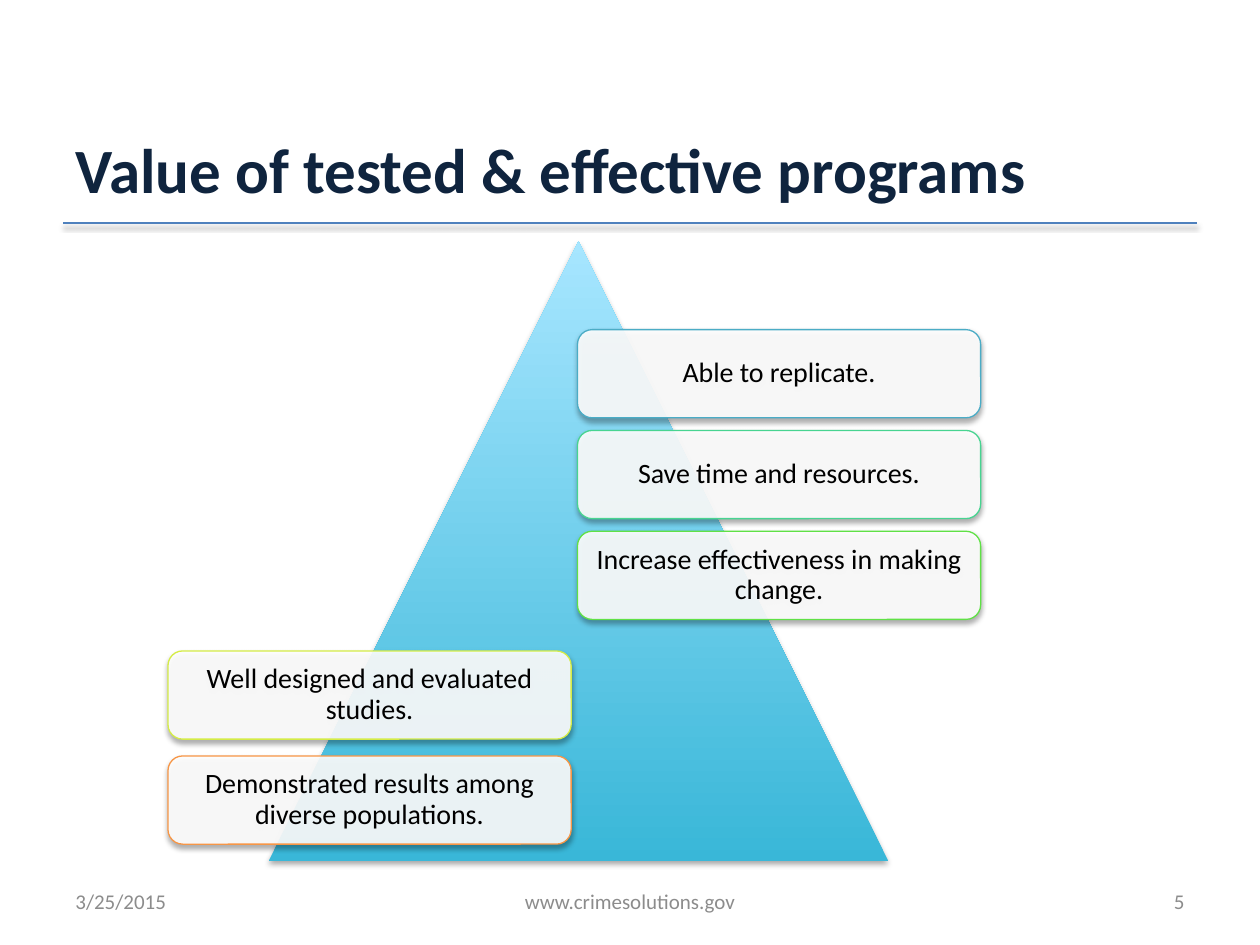
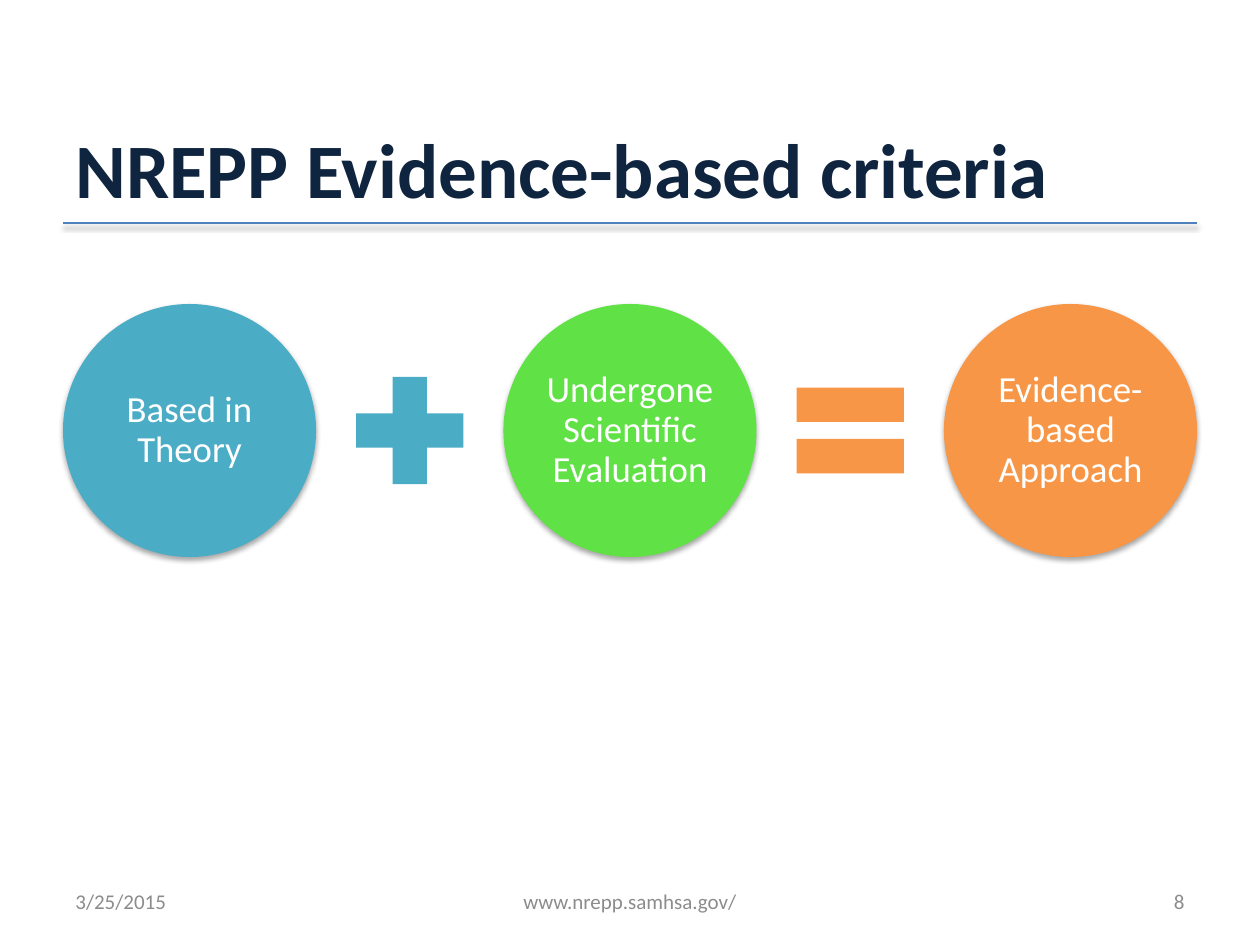
from dataclasses import dataclass

import lxml.etree
import pptx
import pptx.dml.color
import pptx.enum.shapes
import pptx.enum.text
import pptx.oxml.ns
import pptx.util
from pptx.shapes.autoshape import Shape
from pptx.slide import Slide

RGB = pptx.dml.color.RGBColor
SHAPES = pptx.enum.shapes.MSO_SHAPE
ALIGN = pptx.enum.text.PP_ALIGN
qn = pptx.oxml.ns.qn

NAVY = RGB(0x0F, 0x24, 0x3E)
RULE_BLUE = RGB(0x4F, 0x81, 0xBD)
FOOTER_GRAY = RGB(0x8C, 0x8C, 0x8C)
WHITE = RGB(0xFF, 0xFF, 0xFF)
BLACK = RGB(0x00, 0x00, 0x00)
TEAL = RGB(0x4B, 0xAC, 0xC6)
MINT = RGB(0x48, 0xD4, 0x91)
GREEN = RGB(0x60, 0xE1, 0x46)
LIME = RGB(0xD5, 0xEC, 0x46)
ORANGE = RGB(0xF7, 0x96, 0x46)
PYRAMID_BASE = RGB(0x39, 0xB7, 0xD8)
PYRAMID_TIP = RGB(0xA7, 0xE6, 0xFF)

FONT = "Calibri"
SLIDE_WIDTH = pptx.util.Inches(10)
SLIDE_HEIGHT = pptx.util.Inches(7.5)
COLUMNS, ROWS = 120, 90
MARGIN = 6
RULE_ROW = 21.25
CARD_WIDTH, CARD_HEIGHT = 38.4, 8.4
CIRCLE, OPERATOR = 24.1, 13.9
EQUATION_CENTER = 41


@dataclass(frozen=True)
class Area:
    """A rectangle in grid columns and rows."""
    column: float
    row: float
    width: float
    height: float

    def emu(self) -> tuple[int, int, int, int]:
        return (across(self.column), down(self.row),
                across(self.width), down(self.height))


@dataclass(frozen=True)
class TextStyle:
    size: float
    color: RGB
    bold: bool = False
    align: ALIGN = ALIGN.CENTER
    spacing: float = 1.0
    side_inset: float = 0.1
    end_inset: float = 0.05


@dataclass(frozen=True)
class CardStack:
    column: float
    row: float
    pitch: float
    cards: tuple[tuple[str, RGB], ...]


@dataclass(frozen=True)
class Term:
    """One member of the equation: a labelled circle or an operator sign."""
    kind: SHAPES
    color: RGB
    label: str = ""

    @property
    def size(self) -> float:
        return CIRCLE if self.label else OPERATOR


CARD_TEXT = TextStyle(16, BLACK, spacing=0.9, side_inset=0.07, end_inset=0.07)
CIRCLE_TEXT = TextStyle(21, WHITE, spacing=0.9, side_inset=0.03, end_inset=0.03)

STACKS = (
    CardStack(55, 31.4, 9.6, (
        ("Able to replicate.", TEAL),
        ("Save time and resources.", MINT),
        ("Increase effectiveness in making change.", GREEN),
    )),
    CardStack(16, 62, 10, (
        ("Well designed and evaluated studies.", LIME),
        ("Demonstrated results among diverse populations.", ORANGE),
    )),
)

EQUATION = (
    Term(SHAPES.OVAL, TEAL, "Based in Theory"),
    Term(SHAPES.MATH_PLUS, TEAL),
    Term(SHAPES.OVAL, GREEN, "Undergone Scientific Evaluation"),
    Term(SHAPES.MATH_EQUAL, ORANGE),
    Term(SHAPES.OVAL, ORANGE, "Evidence-based Approach"),
)


def across(columns: float) -> int:
    return round(SLIDE_WIDTH * columns / COLUMNS)


def down(rows: float) -> int:
    return round(SLIDE_HEIGHT * rows / ROWS)


def set_all(target: object, values: dict[str, object]) -> None:
    for name, value in values.items():
        setattr(target, name, value)


def add_alpha(color: lxml.etree._Element, percent: int) -> None:
    lxml.etree.SubElement(color, qn("a:alpha"), val=str(percent * 1000))


def cast_shadow(effects: lxml.etree._Element, distance: float, alpha: int) -> None:
    """Fill an effect list with a soft shadow that falls straight down."""
    shadow = lxml.etree.SubElement(
        effects, qn("a:outerShdw"), blurRad=str(pptx.util.Pt(3.1)),
        dist=str(pptx.util.Pt(distance)), dir="5400000", rotWithShape="0")
    add_alpha(lxml.etree.SubElement(shadow, qn("a:srgbClr"), val="000000"), alpha)


def write(shape: Shape, text: str, style: TextStyle) -> None:
    side, end = pptx.util.Inches(style.side_inset), pptx.util.Inches(style.end_inset)
    frame = shape.text_frame
    set_all(frame, {
        "word_wrap": True, "vertical_anchor": pptx.enum.text.MSO_ANCHOR.MIDDLE,
        "margin_left": side, "margin_right": side,
        "margin_top": end, "margin_bottom": end})
    paragraph = frame.paragraphs[0]
    set_all(paragraph, {"alignment": style.align, "line_spacing": style.spacing})
    run = paragraph.add_run()
    run.text = text
    set_all(run.font, {"name": FONT, "size": pptx.util.Pt(style.size),
                       "bold": style.bold})
    run.font.color.rgb = style.color


def add_text(slide: Slide, area: Area, text: str, style: TextStyle) -> None:
    write(slide.shapes.add_textbox(*area.emu()), text, style)


def add_shape(slide: Slide, kind: SHAPES, area: Area, fill: RGB | None = None,
              outline: RGB | None = None, shadow: bool = True) -> Shape:
    shape = slide.shapes.add_shape(kind, *area.emu())
    if fill is not None:
        shape.fill.solid()
        shape.fill.fore_color.rgb = fill
    if outline is None:
        shape.line.fill.background()
    else:
        shape.line.color.rgb = outline
        shape.line.width = pptx.util.Pt(0.75)
    shape.shadow.inherit = False
    if shadow:
        cast_shadow(shape._element.spPr.find(qn("a:effectLst")), 1.8, 35)
    return shape


def add_frame(deck: pptx.presentation.Presentation, title: str, title_size: float,
              site: str, number: int) -> Slide:
    """Add a slide with its title, rule and footer."""
    slide = deck.slides.add_slide(deck.slide_layouts[6])
    rule = slide.shapes.add_connector(
        pptx.enum.shapes.MSO_CONNECTOR.STRAIGHT, across(MARGIN), down(RULE_ROW),
        across(COLUMNS - MARGIN), down(RULE_ROW))
    rule.line.color.rgb = RULE_BLUE
    rule.line.width = pptx.util.Pt(1)
    cast_shadow(lxml.etree.SubElement(rule._element.spPr, qn("a:effectLst")), 1.6, 38)
    add_text(slide, Area(MARGIN, 11, 98, 10), title,
             TextStyle(title_size, NAVY, bold=True, align=ALIGN.LEFT))
    for text, column, width, align in (
            ("3/25/2015", MARGIN, 28, ALIGN.LEFT),
            (site, 41, 38, ALIGN.CENTER),
            (str(number), 86, 28, ALIGN.RIGHT)):
        add_text(slide, Area(column, 83.4, width, 4.8), text,
                 TextStyle(12, FOOTER_GRAY, align=align))
    return slide


def add_pyramid(slide: Slide) -> None:
    pyramid = add_shape(slide, SHAPES.ISOSCELES_TRIANGLE, Area(25.6, 23, 59, 59))
    pyramid.fill.gradient()
    pyramid.fill.gradient_angle = 90
    for stop, color in zip(pyramid.fill.gradient_stops, (PYRAMID_BASE, PYRAMID_TIP)):
        stop.color.rgb = color


def add_cards(slide: Slide, stack: CardStack) -> None:
    for index, (text, outline) in enumerate(stack.cards):
        area = Area(stack.column, stack.row + index * stack.pitch,
                    CARD_WIDTH, CARD_HEIGHT)
        card = add_shape(slide, SHAPES.ROUNDED_RECTANGLE, area, WHITE, outline)
        add_alpha(card._element.spPr.find(qn("a:solidFill")).find(qn("a:srgbClr")), 90)
        write(card, text, CARD_TEXT)


def add_equation(slide: Slide, terms: tuple[Term, ...]) -> None:
    """Spread the terms between the margins with equal gaps."""
    free = COLUMNS - 2 * MARGIN - sum(term.size for term in terms)
    gap = free / (len(terms) - 1)
    column = MARGIN
    for term in terms:
        area = Area(column, EQUATION_CENTER - term.size / 2, term.size, term.size)
        shape = add_shape(slide, term.kind, area, term.color, shadow=bool(term.label))
        if term.label:
            write(shape, term.label, CIRCLE_TEXT)
        column += term.size + gap


def main() -> None:
    deck = pptx.Presentation()
    set_all(deck, {"slide_width": SLIDE_WIDTH, "slide_height": SLIDE_HEIGHT})

    value = add_frame(deck, "Value of tested & effective programs", 36,
                      "www.crimesolutions.gov", 5)
    add_pyramid(value)
    for stack in STACKS:
        add_cards(value, stack)

    criteria = add_frame(deck, "NREPP Evidence-based criteria", 44,
                         "www.nrepp.samhsa.gov/", 8)
    add_equation(criteria, EQUATION)
    deck.save("out.pptx")


if __name__ == "__main__":
    main()
